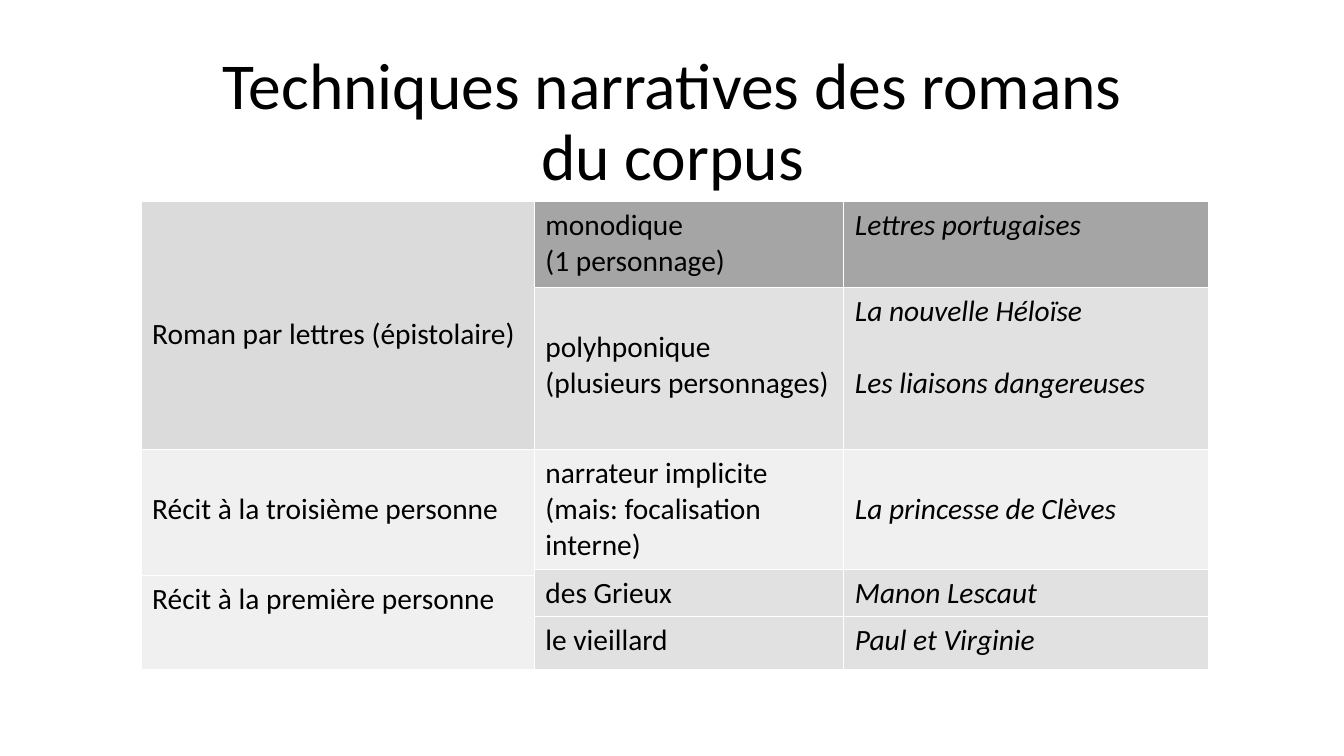
from lxml import etree
from pptx import Presentation
from pptx.dml.color import RGBColor as RGB
from pptx.enum.text import MSO_ANCHOR, PP_ALIGN
from pptx.oxml.ns import qn
from pptx.util import Inches, Pt

TITLE = "Techniques narratives des romans\vdu corpus"
FONT, SIZE = "Calibri", 21
LINE = 0.36  # height of one text line, inches
COLORS = {"text": "000000", "border": "FFFFFF", "genre": "DBDBDB",
          "head": "A5A5A5", "dark": "E1E1E1", "light": "F0F0F0"}

COLS = [3.9, 3.07, 3.62]
ROWS = [0.85, 1.61, 1.19, 0.06, 0.41, 0.52]

# row, column, rows spanned, fill, lines left free above, paragraphs
CELLS = [
    (0, 0, 2, "genre", 3, ["Roman par lettres (épistolaire)"]),
    (0, 1, 1, "head", 0, ["monodique", "(1 personnage)"]),
    (0, 2, 1, "head", 0, ["Lettres portugaises"]),
    (1, 1, 1, "dark", 1, ["polyhponique", "(plusieurs personnages)"]),
    (1, 2, 1, "dark", 0, ["La nouvelle Héloïse", "Les liaisons dangereuses"]),
    (2, 0, 2, "light", 1, ["Récit à la troisième personne"]),
    (2, 1, 1, "light", 0, ["narrateur implicite", "(mais: focalisation interne)"]),
    (2, 2, 1, "light", 1, ["La princesse de Clèves"]),
    (3, 1, 2, "dark", 0, ["des Grieux"]),
    (3, 2, 2, "dark", 0, ["Manon Lescaut"]),
    (4, 0, 2, "light", 0, ["Récit à la première personne"]),
    (5, 1, 1, "dark", 0, ["le vieillard"]),
    (5, 2, 1, "dark", 0, ["Paul et Virginie"]),
]
TITLES_COL = 2  # italic column of novel titles


def write(tf, paragraphs, size=SIZE, italic=False, align=PP_ALIGN.LEFT,
          spacing=None, gap=0):
    for i, text in enumerate(paragraphs):
        p = tf.add_paragraph() if i else tf.paragraphs[0]
        p.text = text
        p.alignment = align
        p.line_spacing = spacing
        if i and gap:
            p.space_before = Inches(gap)
        for r in p.runs:
            r.font.name, r.font.size, r.font.italic = FONT, Pt(size), italic
            r.font.color.rgb = RGB.from_string(COLORS["text"])


def add_borders(cell, color, width=1):
    tcPr = cell._tc.get_or_add_tcPr()
    for i, side in enumerate(("lnL", "lnR", "lnT", "lnB")):
        ln = etree.Element(qn(f"a:{side}"), w=str(Pt(width)))
        fill = etree.SubElement(ln, qn("a:solidFill"))
        etree.SubElement(fill, qn("a:srgbClr"), val=color)
        tcPr.insert(i, ln)


prs = Presentation()
prs.slide_width, prs.slide_height = Inches(13.33), Inches(7.5)
s = prs.slides.add_slide(prs.slide_layouts[6])

# Title
box = s.shapes.add_textbox(Inches(0.92), Inches(0.61), Inches(11.5), Inches(1.24))
tf = box.text_frame
tf.word_wrap = True
tf.vertical_anchor = MSO_ANCHOR.MIDDLE
write(tf, [TITLE], size=46.8, align=PP_ALIGN.CENTER, spacing=0.9)

# Table grid
table = s.shapes.add_table(len(ROWS), len(COLS), Inches(1.4), Inches(2),
                           Inches(sum(COLS)), Inches(sum(ROWS))).table
table.first_row = table.horz_banding = False
for col, width in zip(table.columns, COLS):
    col.width = Inches(width)
for row, height in zip(table.rows, ROWS):
    row.height = Inches(height)

# Cells
for row, col, span, fill, free, paragraphs in CELLS:
    cell = table.cell(row, col)
    if span > 1:
        cell.merge(table.cell(row + span - 1, col))
    for k in range(span):
        part = table.cell(row + k, col)
        part.fill.solid()
        part.fill.fore_color.rgb = RGB.from_string(COLORS[fill])
        add_borders(part, COLORS["border"])
    cell.margin_left = cell.margin_right = Inches(0.11)
    cell.margin_top = Inches(0.06 + free * LINE)
    cell.margin_bottom = Inches(0.05)
    is_title = col == TITLES_COL
    write(cell.text_frame, paragraphs, italic=is_title,
          gap=LINE if is_title else 0)

prs.save("out.pptx")
